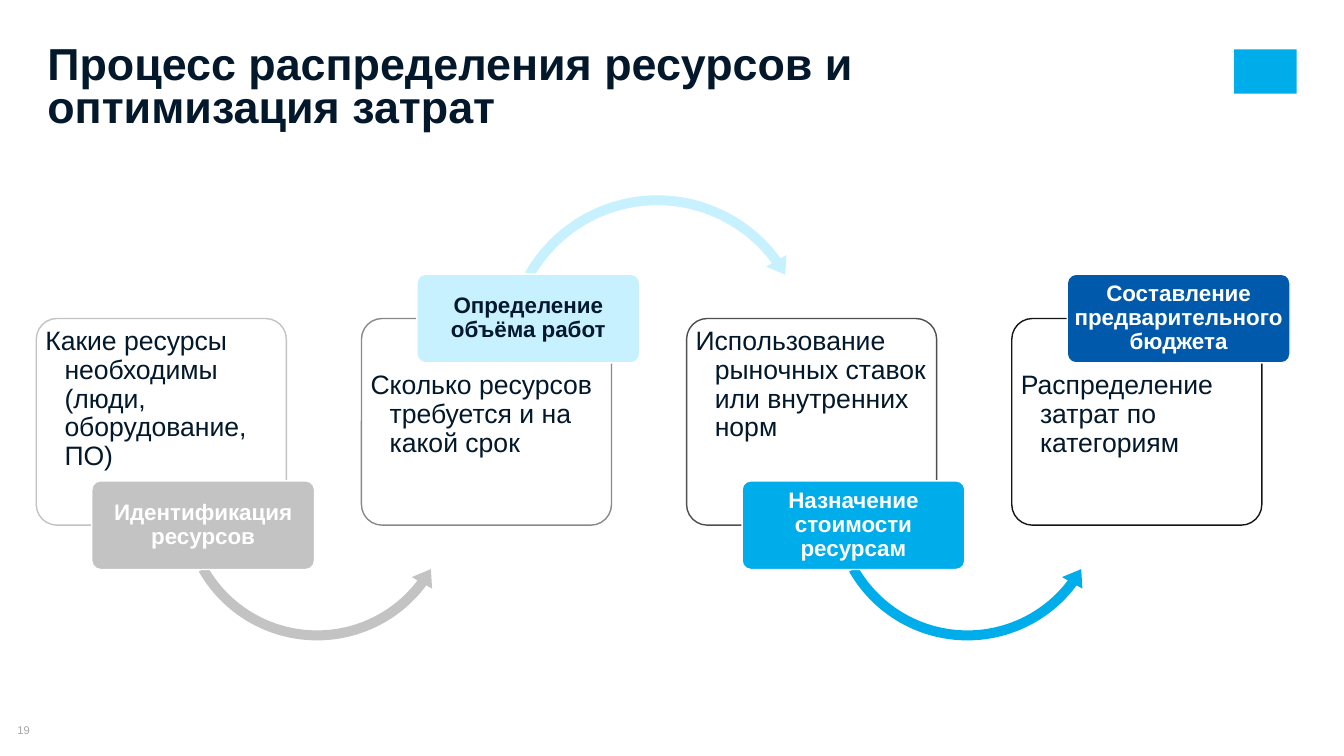
"""Builds a slide showing four steps of resource allocation and cost optimisation."""
from lxml import etree
from pptx import Presentation
from pptx.dml.color import RGBColor
from pptx.enum.shapes import MSO_SHAPE
from pptx.enum.text import MSO_ANCHOR, PP_ALIGN
from pptx.oxml.ns import qn
from pptx.util import Inches, Pt

ROUNDED, RECTANGLE = MSO_SHAPE.ROUNDED_RECTANGLE, MSO_SHAPE.RECTANGLE
ARC_OVER, ARC_UNDER = MSO_SHAPE.CIRCULAR_ARROW, MSO_SHAPE.LEFT_CIRCULAR_ARROW
LEFT, CENTER = PP_ALIGN.LEFT, PP_ALIGN.CENTER
TOP, MIDDLE = MSO_ANCHOR.TOP, MSO_ANCHOR.MIDDLE

TITLE = "Процесс распределения ресурсов и оптимизация затрат"
PAGE_NUMBER = "19"
STEPS = [
    {"label": "Идентификация ресурсов",
     "detail": "Какие ресурсы необходимы (люди, оборудование, ПО)",
     "fill": "C3C3C3", "ink": "FFFFFF", "outline": "C3C3C3"},
    {"label": "Определение объёма работ",
     "detail": "Сколько ресурсов требуется и на какой срок",
     "fill": "C7F1FF", "ink": "03182B", "outline": "898989"},
    {"label": "Назначение стоимости ресурсам",
     "detail": "Использование рыночных ставок или внутренних норм",
     "fill": "00ADEB", "ink": "FFFFFF", "outline": "4F4F4F"},
    {"label": "Составление предварительного бюджета",
     "detail": "Распределение затрат по категориям",
     "fill": "0059AA", "ink": "FFFFFF", "outline": "151515"},
]
THEME = {
    "font": "Arial", "ink": "03182B", "paper": "FFFFFF", "accent": "00ADEB", "muted": "A6A6A6",
    "title": 32, "detail": 19, "label": 16, "page": 8,
}

FIRST_LEFT, STEP_PITCH = 0.36, 3.225
CARD_TOP, CARD_WIDTH, CARD_HEIGHT = 3.16, 2.48, 2.05
LABEL_SHIFT, LABEL_WIDTH, LABEL_HEIGHT = 0.55, 2.21, 0.88
CORNER, HANGING = 0.1, 0.19
LOWER = {"label_top": 4.77, "text_inset": 0.03, "arc": ARC_UNDER, "arc_shift": 1.37,
         "arc_top": 3.59, "arc_size": 2.83, "bend": (0.035, 4.32, 22.075, 90.245, 0.041)}
UPPER = {"label_top": 2.72, "text_inset": 0.47, "arc": ARC_OVER, "arc_shift": 1.36,
         "arc_top": 1.87, "arc_size": 3.15, "bend": (0.031, 3.853, 194.392, 125.755, 0.037)}


def color(value):
    return RGBColor.from_string(value)


def write(holder, text, size, ink, bold=False, align=LEFT, anchor=TOP, insets=(0, 0, 0, 0),
          spacing=1.0):
    frame = holder.text_frame
    frame.word_wrap = True
    frame.vertical_anchor = anchor
    frame.margin_left, frame.margin_top, frame.margin_right, frame.margin_bottom = map(Inches, insets)
    frame.text = text
    paragraph = frame.paragraphs[0]
    paragraph.alignment, paragraph.line_spacing = align, spacing
    font = paragraph.runs[0].font
    font.name, font.size, font.bold = THEME["font"], Pt(size), bold
    font.color.rgb = color(ink)
    return paragraph


def add_form(slide, preset, box, fill, outline=None, adjustments=()):
    form = slide.shapes.add_shape(preset, *map(Inches, box))
    form.shadow.inherit = False
    form.fill.solid()
    form.fill.fore_color.rgb = color(fill)
    if outline:
        form.line.color.rgb = color(outline)
        form.line.width = Pt(1)
    else:
        form.line.fill.background()
    for index, value in enumerate(adjustments):
        form.adjustments[index] = value
    return form


def add_step(slide, index, step):
    side = UPPER if index % 2 else LOWER
    left = FIRST_LEFT + index * STEP_PITCH
    card = add_form(slide, ROUNDED, (left, CARD_TOP, CARD_WIDTH, CARD_HEIGHT),
                    THEME["paper"], step["outline"], [CORNER])
    card_color = card.fill._xPr.find(qn("a:solidFill"))[0]
    etree.SubElement(card_color, qn("a:alpha")).set("val", "90000")
    detail = write(card, step["detail"], THEME["detail"], THEME["ink"],
                   insets=(0.03, side["text_inset"], 0.01, 0.03), spacing=0.9)
    indents = detail._p.get_or_add_pPr()
    indents.set("marL", str(Inches(HANGING)))
    indents.set("indent", str(-Inches(HANGING)))
    if index < len(STEPS) - 1:
        add_form(slide, side["arc"],
                 (left + side["arc_shift"], side["arc_top"], side["arc_size"], side["arc_size"]),
                 step["fill"], adjustments=side["bend"])
    label = add_form(slide, ROUNDED,
                     (left + LABEL_SHIFT, side["label_top"], LABEL_WIDTH, LABEL_HEIGHT),
                     step["fill"], THEME["paper"], [CORNER])
    write(label, step["label"], THEME["label"], step["ink"], True, CENTER, MIDDLE,
          (0.02, 0.02, 0.02, 0.02), 0.9)


def main():
    deck = Presentation()
    deck.slide_width, deck.slide_height = Inches(13.33), Inches(7.5)
    slide = deck.slides.add_slide(deck.slide_layouts[6])
    add_form(slide, RECTANGLE, (12.24, 0.49, 0.62, 0.44), THEME["accent"])
    page = slide.shapes.add_textbox(*map(Inches, (0, 7.18, 0.47, 0.13)))
    write(page, PAGE_NUMBER, THEME["page"], THEME["muted"], align=CENTER, anchor=MIDDLE)
    heading = slide.shapes.add_textbox(*map(Inches, (0.47, 0.46, 10.51, 0.86)))
    write(heading, TITLE, THEME["title"], THEME["ink"], bold=True, spacing=0.8)
    for index, step in enumerate(STEPS):
        add_step(slide, index, step)
    deck.save("out.pptx")


if __name__ == "__main__":
    main()
